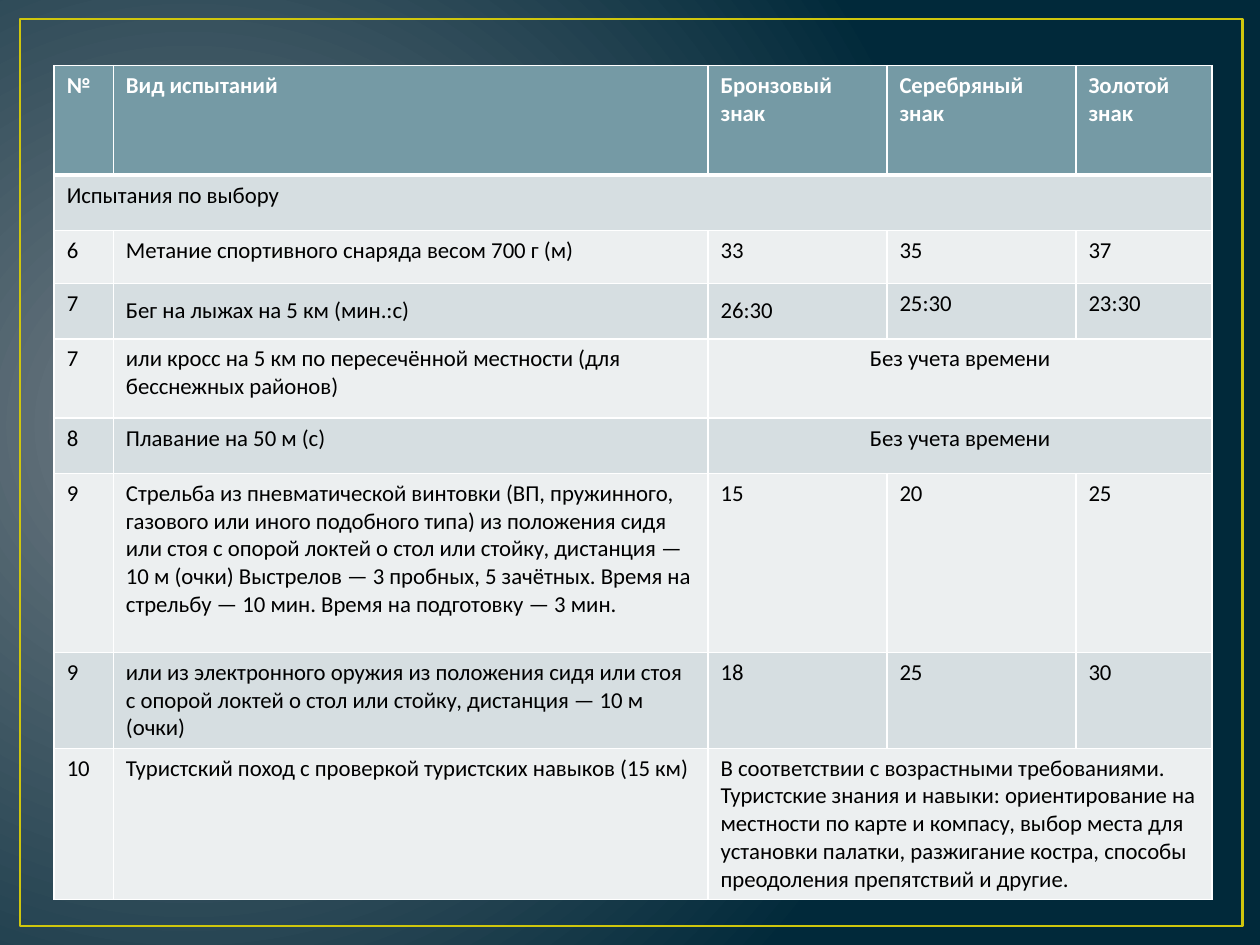
from lxml import etree
from pptx import Presentation
from pptx.dml.color import RGBColor
from pptx.enum.shapes import MSO_SHAPE
from pptx.enum.text import MSO_ANCHOR, PP_ALIGN
from pptx.oxml import parse_xml
from pptx.oxml.ns import qn
from pptx.util import Inches, Pt

WHITE = RGBColor(0xFF, 0xFF, 0xFF)
BLACK = RGBColor(0, 0, 0)
YELLOW = RGBColor(0xCF, 0xC6, 0x0D)
TEAL = RGBColor(0x75, 0x9A, 0xA5)
BAND_DARK = RGBColor(0xD6, 0xDE, 0xE1)
BAND_LIGHT = RGBColor(0xEC, 0xEF, 0xF0)
GRAY = RGBColor(0x71, 0x7C, 0x84)
NAVY = RGBColor(0x01, 0x29, 0x3A)

NO_TIME = "Без учета времени"
ROWS = [
    ("№", "Вид испытаний", "Бронзовый знак", "Серебряный знак", "Золотой знак"),
    ("Испытания по выбору",),
    ("6", "Метание спортивного снаряда весом 700 г (м)", "33", "35", "37"),
    ("7", "Бег на лыжах на 5 км (мин.:с)", "26:30", "25:30", "23:30"),
    ("7", "или кросс на 5 км по пересечённой местности (для бесснежных районов)", NO_TIME),
    ("8", "Плавание на 50 м (с)", NO_TIME),
    ("9", "Стрельба из пневматической винтовки (ВП, пружинного, газового или иного "
          "подобного типа) из положения сидя или стоя с опорой локтей о стол или стойку, "
          "дистанция — 10 м (очки) Выстрелов — 3 пробных, 5 зачётных. "
          "Время на стрельбу — 10 мин. Время на подготовку — 3 мин.", "15", "20", "25"),
    ("9", "или из электронного оружия из положения сидя или стоя с опорой локтей "
          "о стол или стойку, дистанция — 10 м (очки)", "18", "25", "30"),
    ("10", "Туристский поход с проверкой туристских навыков (15 км)",
     "В соответствии с возрастными требованиями. Туристские знания и навыки: "
     "ориентирование на местности по карте и компасу, выбор места для установки палатки, "
     "разжигание костра, способы преодоления препятствий и другие."),
]
WIDTHS = [0.47, 4.72, 1.42, 1.5, 1.08]
HEIGHTS = [0.87, 0.44, 0.42, 0.44, 0.63, 0.44, 1.42, 0.76, 1.2]
MIDDLE_CELLS = {(3, 1), (3, 2)}
DRAWING = "http://schemas.openxmlformats.org/drawingml/2006/main"


def paint_background(page):
    page.background.fill.solid()
    properties = page.background._cSld.bg.bgPr
    properties.replace(properties.find(qn("a:solidFill")), parse_xml(
        f'<a:gradFill xmlns:a="{DRAWING}" rotWithShape="1"><a:gsLst>'
        f'<a:gs pos="0"><a:srgbClr val="{GRAY}"/></a:gs>'
        f'<a:gs pos="100000"><a:srgbClr val="{NAVY}"/></a:gs></a:gsLst>'
        '<a:path path="circle"><a:fillToRect l="15000" t="50000" r="85000" b="60000"/>'
        '</a:path></a:gradFill>'))


def add_frame(page):
    frame = page.shapes.add_shape(
        MSO_SHAPE.RECTANGLE, Inches(0.16), Inches(0.15), Inches(9.7), Inches(7.2))
    frame.shadow.inherit = False
    frame.fill.background()
    frame.line.color.rgb = YELLOW
    frame.line.width = Pt(1.5)


def set_borders(cell, widths):
    properties = cell._tc.get_or_add_tcPr()
    for side, width in widths.items():
        line = etree.SubElement(properties, qn(f"a:ln{side}"), w=str(Pt(width)))
        fill = etree.SubElement(line, qn("a:solidFill"))
        etree.SubElement(fill, qn("a:srgbClr"), val=str(WHITE))


def style_cell(cell, row):
    set_borders(cell, {"L": 1, "R": 1, "T": 3 if row == 1 else 1, "B": 3 if row == 0 else 1})
    cell.fill.solid()
    cell.fill.fore_color.rgb = TEAL if row == 0 else (BAND_LIGHT, BAND_DARK)[row % 2]


def write_cell(cell, text, row, column):
    cell.vertical_anchor = MSO_ANCHOR.MIDDLE if (row, column) in MIDDLE_CELLS else MSO_ANCHOR.TOP
    para = cell.text_frame.paragraphs[0]
    para.alignment = PP_ALIGN.CENTER if text == NO_TIME else PP_ALIGN.LEFT
    span = para.add_run()
    span.text = text
    for name, value in {"name": "Calibri", "size": Pt(13), "bold": row == 0}.items():
        setattr(span.font, name, value)
    span.font.color.rgb = WHITE if row == 0 else BLACK


def add_standards(page):
    table = page.shapes.add_table(
        len(ROWS), len(WIDTHS), Inches(0.43), Inches(0.52),
        Inches(sum(WIDTHS)), Inches(sum(HEIGHTS))).table
    for column, width in zip(table.columns, WIDTHS):
        column.width = Inches(width)
    last = len(WIDTHS) - 1
    for row, texts in enumerate(ROWS):
        table.rows[row].height = Inches(HEIGHTS[row])
        for column in range(len(WIDTHS)):
            style_cell(table.cell(row, column), row)
        for column, text in enumerate(texts):
            write_cell(table.cell(row, column), text, row, column)
        if len(texts) <= last:
            table.cell(row, len(texts) - 1).merge(table.cell(row, last))


def main():
    deck = Presentation()
    deck.slide_width, deck.slide_height = Inches(10), Inches(7.5)
    page = deck.slides.add_slide(deck.slide_layouts[6])
    paint_background(page)
    add_frame(page)
    add_standards(page)
    deck.save("out.pptx")


if __name__ == "__main__":
    main()
